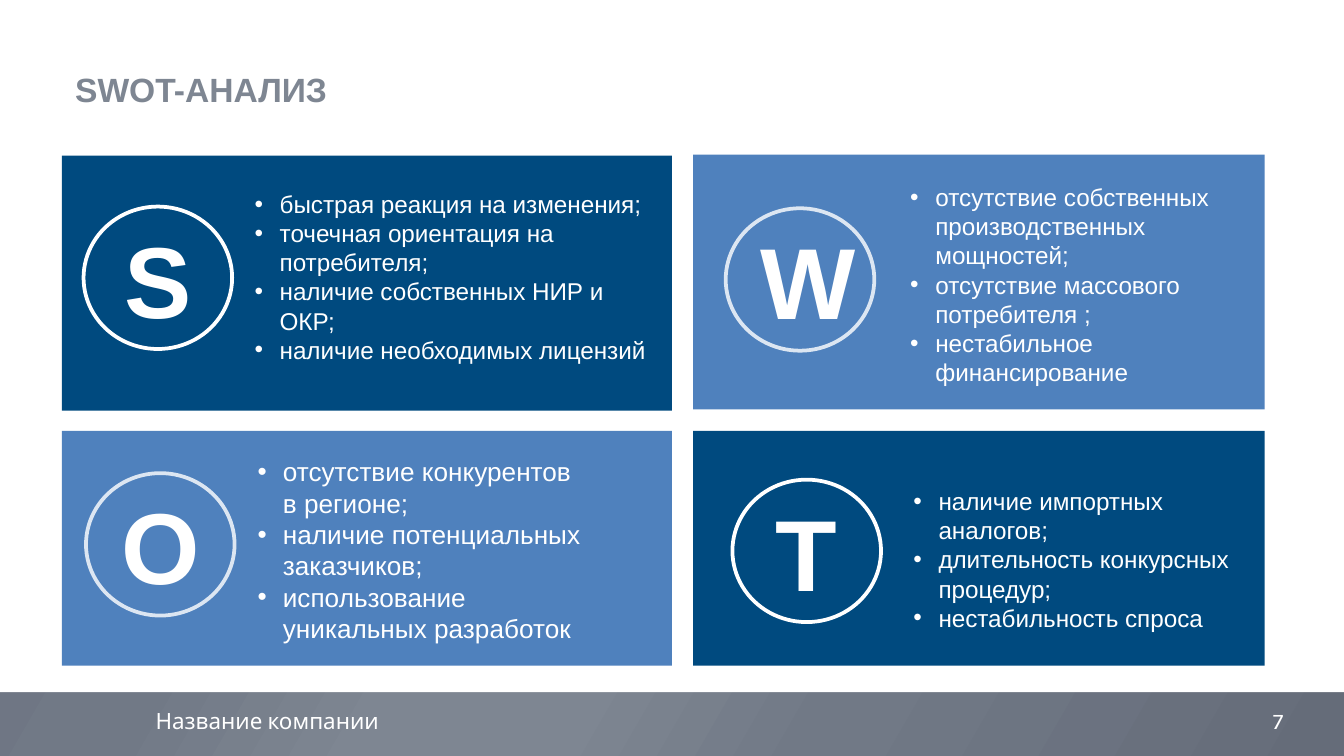
from dataclasses import dataclass

from lxml import etree
from pptx import Presentation
from pptx.dml.color import RGBColor
from pptx.enum import shapes, text
from pptx.oxml import ns
from pptx.util import Pt

WHITE = RGBColor(0xFF, 0xFF, 0xFF)
NAVY = RGBColor(0x00, 0x4A, 0x7F)
BLUE = RGBColor(0x4F, 0x81, 0xBD)
PALE = RGBColor(0xDC, 0xE6, 0xF2)
GRAY = RGBColor(0x7E, 0x86, 0x92)
FOOTER_STOPS = ((0, "656C7E"), (30, "717986"), (45, "7E8692"),
                (55, "7E8692"), (70, "717986"), (100, "656C79"))
WIDTH, HEIGHT = 720, 405
CIRCLE = (79.6, 76.3)
HANGING = 13.5


@dataclass(frozen=True)
class Box:
    left: float
    top: float
    width: float
    height: float

    def lengths(self) -> tuple:
        return Pt(self.left), Pt(self.top), Pt(self.width), Pt(self.height)


@dataclass(frozen=True)
class Quadrant:
    letter: str
    panel: Box
    color: RGBColor
    ring: RGBColor
    circle_at: tuple[float, float]
    notes: Box
    points: tuple[str, ...]
    size: float = 13
    indent: float = HANGING


QUADRANTS = (
    Quadrant("S", Box(33.2, 83.4, 326.8, 136.6), NAVY, WHITE, (44.8, 110.7),
             Box(129.3, 97.8, 225, 101.5),
             ("быстрая реакция на изменения;",
              "точечная ориентация на потребителя;",
              "наличие собственных НИР и ОКР;",
              "наличие необходимых лицензий")),
    Quadrant("W", Box(371.3, 82.8, 306.2, 136.6), BLUE, PALE, (388.8, 111.6),
             Box(473.8, 94.2, 203, 117.4),
             ("отсутствие собственных производственных мощностей;",
              "отсутствие массового потребителя ;",
              "нестабильное финансирование"), indent=20.2),
    Quadrant("O", Box(33.2, 230.9, 326.8, 125.7), BLUE, PALE, (46.1, 253.5),
             Box(131, 240.5, 198.7, 126),
             ("отсутствие конкурентов\vв регионе;",
              "наличие потенциальных заказчиков;",
              "использование уникальных разработок"), size=14),
    Quadrant("T", Box(371.3, 230.9, 306.2, 125.7), NAVY, WHITE, (392.4, 257),
             Box(482.2, 257, 193, 85.7),
             ("наличие импортных аналогов;",
              "длительность конкурсных процедур;",
              "нестабильность спроса")),
)


def style(paragraph, size: float, color: RGBColor, font: str = "Arial",
          bold: bool = False) -> None:
    paragraph.font.size = Pt(size)
    paragraph.font.name = font
    paragraph.font.bold = bold
    paragraph.font.color.rgb = color


def add_plain(slide, kind, box: Box):
    """Add a preset shape with no shadow, fill or outline."""
    shape = slide.shapes.add_shape(kind, *box.lengths())
    shape.shadow.inherit = False
    shape.fill.background()
    shape.line.fill.background()
    return shape


def add_panel(slide, box: Box, color: RGBColor) -> None:
    panel = add_plain(slide, shapes.MSO_SHAPE.RECTANGLE, box)
    panel.fill.solid()
    panel.fill.fore_color.rgb = color


def add_frame(slide, box: Box):
    frame = slide.shapes.add_textbox(*box.lengths()).text_frame
    frame.word_wrap = True
    return frame


def add_label(slide, box: Box, words: str, size: float, color: RGBColor,
              font: str, bold: bool = False, align=text.PP_ALIGN.LEFT) -> None:
    label = add_frame(slide, box).paragraphs[0]
    label.text = words
    label.alignment = align
    style(label, size, color, font, bold)


def add_backdrop(slide) -> None:
    """Cover the slide with the footer gradient, then white above the footer."""
    gradient = add_plain(slide, shapes.MSO_SHAPE.RECTANGLE,
                         Box(0, 0, WIDTH, HEIGHT))
    gradient.fill.gradient()
    fill = gradient.fill._fill._gradFill
    stops = fill.find(ns.qn("a:gsLst"))
    for stop in list(stops):
        stops.remove(stop)
    for position, color in FOOTER_STOPS:
        stop = etree.SubElement(stops, ns.qn("a:gs"), pos=str(position * 1000))
        etree.SubElement(stop, ns.qn("a:srgbClr"), val=color)
    fill.find(ns.qn("a:lin")).set("ang", str(30 * 60000))
    add_panel(slide, Box(0, 0, WIDTH, 370.8), WHITE)


def add_bullet(paragraph, indent: float) -> None:
    properties = paragraph._p.get_or_add_pPr()
    properties.set("marL", str(Pt(indent)))
    properties.set("indent", str(-Pt(HANGING)))
    etree.SubElement(properties, ns.qn("a:buFont"), typeface="Arial")
    etree.SubElement(properties, ns.qn("a:buChar"), char="•")


def add_quadrant(slide, quadrant: Quadrant) -> None:
    add_panel(slide, quadrant.panel, quadrant.color)

    circle = add_plain(slide, shapes.MSO_SHAPE.OVAL,
                       Box(*quadrant.circle_at, *CIRCLE))
    circle.line.color.rgb = quadrant.ring
    circle.line.width = Pt(2)
    circle.text_frame.vertical_anchor = text.MSO_ANCHOR.MIDDLE
    letter = circle.text_frame.paragraphs[0]
    letter.text = quadrant.letter
    letter.alignment = text.PP_ALIGN.CENTER
    style(letter, 54, WHITE, bold=True)

    frame = add_frame(slide, quadrant.notes)
    for index, point in enumerate(quadrant.points):
        item = frame.add_paragraph() if index else frame.paragraphs[0]
        item.text = point
        add_bullet(item, quadrant.indent)
        style(item, quadrant.size, WHITE)


def main() -> None:
    deck = Presentation()
    deck.slide_width, deck.slide_height = Pt(WIDTH), Pt(HEIGHT)
    slide = deck.slides.add_slide(deck.slide_layouts[6])
    add_backdrop(slide)
    add_label(slide, Box(33.2, 33.2, 566.6, 51), "SWОT-АНАЛИЗ", 18, GRAY,
              "Arial", bold=True)
    add_label(slide, Box(76.3, 375.1, 167.8, 21.8), "Название компании", 12,
              WHITE, "Karla")
    add_label(slide, Box(649.4, 375.1, 70.6, 21.8), "7", 12, WHITE, "Karla",
              align=text.PP_ALIGN.CENTER)
    for quadrant in QUADRANTS:
        add_quadrant(slide, quadrant)
    deck.save("out.pptx")


if __name__ == "__main__":
    main()
